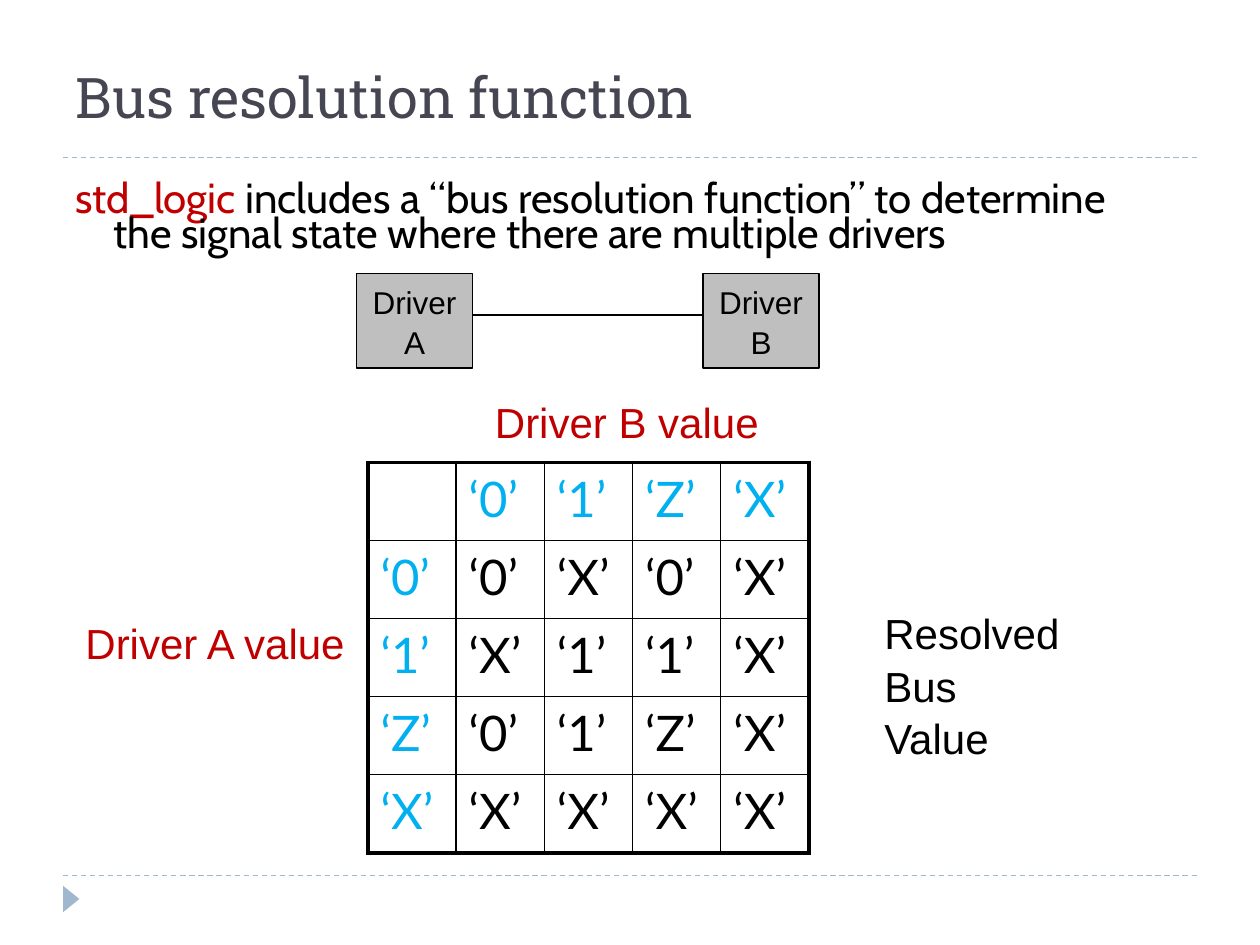
from lxml import etree
from pptx import Presentation
from pptx.dml.color import RGBColor
from pptx.enum.dml import MSO_LINE
from pptx.enum.shapes import MSO_CONNECTOR, MSO_SHAPE
from pptx.enum.text import MSO_ANCHOR, MSO_AUTO_SIZE, PP_ALIGN
from pptx.oxml.ns import qn
from pptx.util import Inches, Pt

STRAIGHT = MSO_CONNECTOR.STRAIGHT
DASH = MSO_LINE.DASH
LEFT, CENTER = PP_ALIGN.LEFT, PP_ALIGN.CENTER

BLACK = RGBColor(0x00, 0x00, 0x00)
RED = RGBColor(0xC0, 0x00, 0x00)
CYAN = RGBColor(0x00, 0xB0, 0xF0)
GRAY = RGBColor(0xBF, 0xBF, 0xBF)
SLATE = RGBColor(0x46, 0x46, 0x53)
PALE_BLUE = RGBColor(0x9F, 0xB8, 0xCD)

# Content
TITLE = "Bus resolution function"
BODY_RUNS = [
    ("std_logic ", RED),
    ("includes a “bus resolution function” to determine the signal state "
     "where there are multiple drivers", BLACK),
]
STATES = "01ZX"
RESOLVED = ["0X0X", "X11X", "01ZX", "XXXX"]  # one row per driver A state
DRIVERS = [("A", 2.83), ("B", 5.58)]  # name, left
LABELS = [  # lines, left, top, width, height, colour
    (["Driver B value"], 3.83, 3.08, 2.3, 0.5, RED),
    (["Driver A value"], 0.58, 4.83, 2.3, 0.5, RED),
    (["Resolved", "Bus", "Value"], 6.92, 4.75, 1.59, 1.3, BLACK),
]

# Layout in inches
RULE_TOPS = [1.25, 6.95]
DRIVER_TOP, DRIVER_WIDTH, DRIVER_HEIGHT, BUS_TOP = 2.17, 0.92, 0.75, 2.5
TABLE_LEFT, TABLE_TOP, COLUMN_WIDTH, ROW_HEIGHT = 2.92, 3.67, 0.7, 0.62
THIN, THICK = 1, 2.25


def place(shape, left, top, width, height):
    shape.left, shape.top = Inches(left), Inches(top)
    shape.width, shape.height = Inches(width), Inches(height)


def set_font(font, name, size, color):
    font.name, font.size = name, Pt(size)
    font.color.rgb = color


def write_lines(frame, lines, size, color, alignment):
    frame.word_wrap = False
    frame.text = "\n".join(lines)
    for paragraph in frame.paragraphs:
        paragraph.alignment = alignment
        paragraph.line_spacing = 1.05
        set_font(paragraph.font, "Arial", size, color)


def add_line(shapes, left, right, top, color, dash=None):
    line = shapes.add_connector(STRAIGHT, Inches(left), Inches(top),
                                Inches(right), Inches(top))
    line.line.color.rgb = color
    line.line.width = Pt(0.75)
    line.line.dash_style = dash
    etree.SubElement(line._element.spPr, qn("a:effectLst"))


def set_borders(cell, widths):
    properties = cell._tc.get_or_add_tcPr()
    for index, (side, width) in enumerate(widths.items()):
        border = etree.Element(qn(f"a:ln{side}"), w=str(Pt(width)))
        fill = etree.SubElement(border, qn("a:solidFill"))
        etree.SubElement(fill, qn("a:srgbClr"), val=str(BLACK))
        properties.insert(index, border)


presentation = Presentation()
presentation.slide_width, presentation.slide_height = Inches(10), Inches(7.5)
slide = presentation.slides.add_slide(presentation.slide_layouts[1])
shapes = slide.shapes

# Rules and corner marker
for top in RULE_TOPS:
    add_line(shapes, 0.5, 9.5, top, PALE_BLUE, DASH)
marker = shapes.add_shape(MSO_SHAPE.ISOSCELES_TRIANGLE, Inches(0.46),
                          Inches(7.07), Inches(0.21), Inches(0.13))
marker.rotation = 90
marker.shadow.inherit = False
marker.fill.solid()
marker.fill.fore_color.rgb = PALE_BLUE
marker.line.fill.background()

# Title
title = shapes.title
place(title, 0.5, 0.3, 9, 0.78)
title.text_frame.text = TITLE
title.text_frame.vertical_anchor = MSO_ANCHOR.BOTTOM
title.text_frame.auto_size = MSO_AUTO_SIZE.NONE
paragraph = title.text_frame.paragraphs[0]
paragraph.alignment = LEFT
set_font(paragraph.font, "Roboto Slab", 32, SLATE)

# Body with a hanging indent and no bullet
body = slide.placeholders[1]
place(body, 0.5, 1.42, 8.83, 1)
body.text_frame.auto_size = MSO_AUTO_SIZE.NONE
paragraph = body.text_frame.paragraphs[0]
paragraph.line_spacing = 0.7
paragraph.space_before = Pt(5.8)
properties = paragraph._p.get_or_add_pPr()
properties.set("marL", str(Inches(0.3)))
properties.set("indent", str(Inches(-0.3)))
etree.SubElement(properties, qn("a:buNone"))
for text, color in BODY_RUNS:
    run = paragraph.add_run()
    run.text = text
    set_font(run.font, "Cabin", 24, color)

# Resolution table
cells = [[""] + list(STATES)]
cells += [[state] + list(row) for state, row in zip(STATES, RESOLVED)]
count = len(cells)
last = count - 1
table = shapes.add_table(count, count, Inches(TABLE_LEFT), Inches(TABLE_TOP),
                         Inches(COLUMN_WIDTH * count),
                         Inches(ROW_HEIGHT * count)).table
for index in range(count):
    table.columns[index].width = Inches(COLUMN_WIDTH)
    table.rows[index].height = Inches(ROW_HEIGHT)
for row, values in enumerate(cells):
    for column, value in enumerate(values):
        cell = table.cell(row, column)
        cell.fill.background()
        cell.text = f"‘{value}’" if value else ""
        is_header = row == 0 or column == 0
        paragraph = cell.text_frame.paragraphs[0]
        set_font(paragraph.font, "Lato", 28, CYAN if is_header else BLACK)
        paragraph.font.bold = False
        set_borders(cell, {
            "L": THICK if column == 0 else THIN,
            "R": THICK if column == last else THIN,
            "T": THICK if row == 0 else THIN,
            "B": THICK if row == last else THIN,
        })

# Drivers and the bus between them
for name, left in DRIVERS:
    driver = shapes.add_shape(MSO_SHAPE.RECTANGLE, Inches(left),
                              Inches(DRIVER_TOP), Inches(DRIVER_WIDTH),
                              Inches(DRIVER_HEIGHT))
    driver.shadow.inherit = False
    driver.fill.solid()
    driver.fill.fore_color.rgb = GRAY
    driver.line.color.rgb = BLACK
    driver.line.width = Pt(0.75)
    driver.text_frame.vertical_anchor = MSO_ANCHOR.MIDDLE
    write_lines(driver.text_frame, ["Driver", name], 18, BLACK, CENTER)
add_line(shapes, DRIVERS[0][1] + DRIVER_WIDTH, DRIVERS[1][1], BUS_TOP, BLACK)

# Table labels
for lines, left, top, width, height, color in LABELS:
    label = shapes.add_textbox(Inches(left), Inches(top), Inches(width),
                               Inches(height))
    write_lines(label.text_frame, lines, 24, color, LEFT)

presentation.save("out.pptx")
